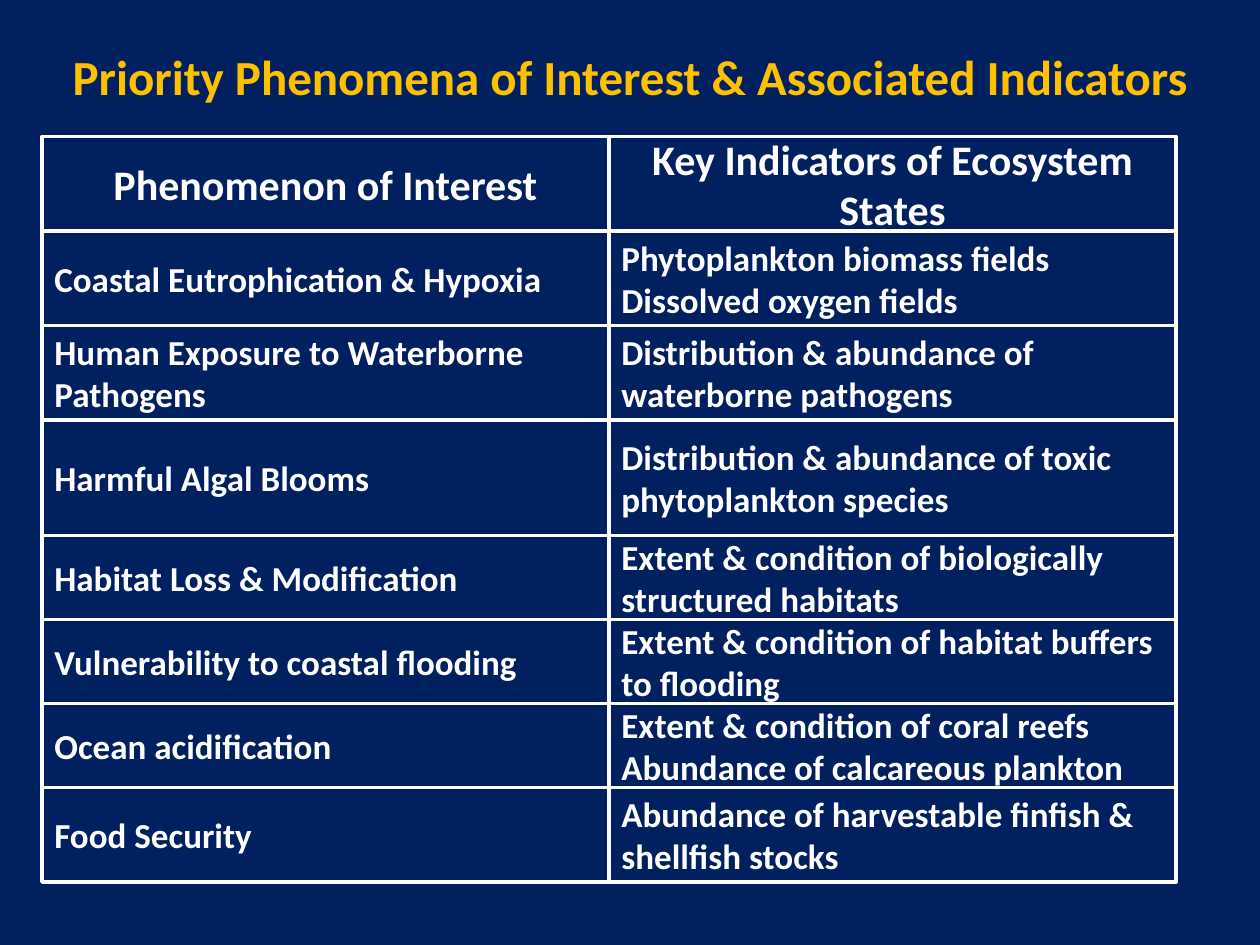
import pptx
import pptx.util
import pptx.dml.color
import pptx.enum.shapes
import pptx.enum.text

Pt = pptx.util.Pt
ALIGN = pptx.enum.text.PP_ALIGN
MIDDLE = pptx.enum.text.MSO_ANCHOR.MIDDLE
RECT = pptx.enum.shapes.MSO_SHAPE.RECTANGLE

# Content
TITLE = "Priority Phenomena of Interest & Associated Indicators"
# Row height, phenomenon, lines of indicators
ROWS = [
    (54, "Phenomenon of Interest", ["Key Indicators of Ecosystem States"]),
    (54, "Coastal Eutrophication & Hypoxia",
     ["Phytoplankton biomass fields", "Dissolved oxygen fields"]),
    (54, "Human Exposure to Waterborne Pathogens",
     ["Distribution & abundance of waterborne pathogens"]),
    (66, "Harmful Algal Blooms",
     ["Distribution & abundance of toxic phytoplankton species"]),
    (48, "Habitat Loss & Modification",
     ["Extent & condition of biologically structured habitats"]),
    (48, "Vulnerability to coastal flooding",
     ["Extent & condition of habitat buffers to flooding"]),
    (48, "Ocean acidification",
     ["Extent & condition of coral reefs", "Abundance of calcareous plankton"]),
    (54, "Food Security",
     ["Abundance of harvestable finfish & shellfish stocks"]),
]

# Layout and formats
LEFT, TOP, WIDTH = 24, 78, 324
NAVY, GOLD, WHITE = "002060", "FFC000", "FFFFFF"
HEAD = {"size": Pt(24), "align": ALIGN.CENTER, "color": WHITE}
BODY = {"size": Pt(20), "align": ALIGN.LEFT, "color": WHITE}
MAIN = {"size": Pt(28), "align": ALIGN.CENTER, "color": GOLD}


def paint(color, code):
    color.rgb = pptx.dml.color.RGBColor.from_string(code)


def write(shape, lines, style):
    frame = shape.text_frame
    frame.word_wrap = True
    frame.vertical_anchor = MIDDLE
    frame.text = "\n".join(lines)
    for para in frame.paragraphs:
        para.alignment = style["align"]
        font = {"name": "Calibri", "bold": True, "size": style["size"]}
        for key, value in font.items():
            setattr(para.font, key, value)
        paint(para.font.color, style["color"])


def add_cell(slide, box, lines, style):
    cell = slide.shapes.add_shape(RECT, *map(Pt, box))
    cell.shadow.inherit = False
    cell.fill.background()
    cell.line.width = Pt(2)
    paint(cell.line.color, WHITE)
    write(cell, lines, style)


def main():
    deck = pptx.Presentation()
    deck.slide_width, deck.slide_height = Pt(720), Pt(540)
    slide = deck.slides.add_slide(deck.slide_layouts[5])
    slide.background.fill.solid()
    paint(slide.background.fill.fore_color, NAVY)

    # Title
    title = slide.shapes.title
    place = {"left": 0, "top": 0, "width": Pt(720), "height": Pt(86.4)}
    for key, value in place.items():
        setattr(title, key, value)
    write(title, [TITLE], MAIN)

    # Grid of boxes
    top = TOP
    for row, (height, topic, signs) in enumerate(ROWS):
        style = BODY if row else HEAD
        for col, lines in enumerate(([topic], signs)):
            box = (LEFT + col * WIDTH, top, WIDTH, height)
            add_cell(slide, box, lines, style)
        top += height

    deck.save("out.pptx")


if __name__ == "__main__":
    main()
